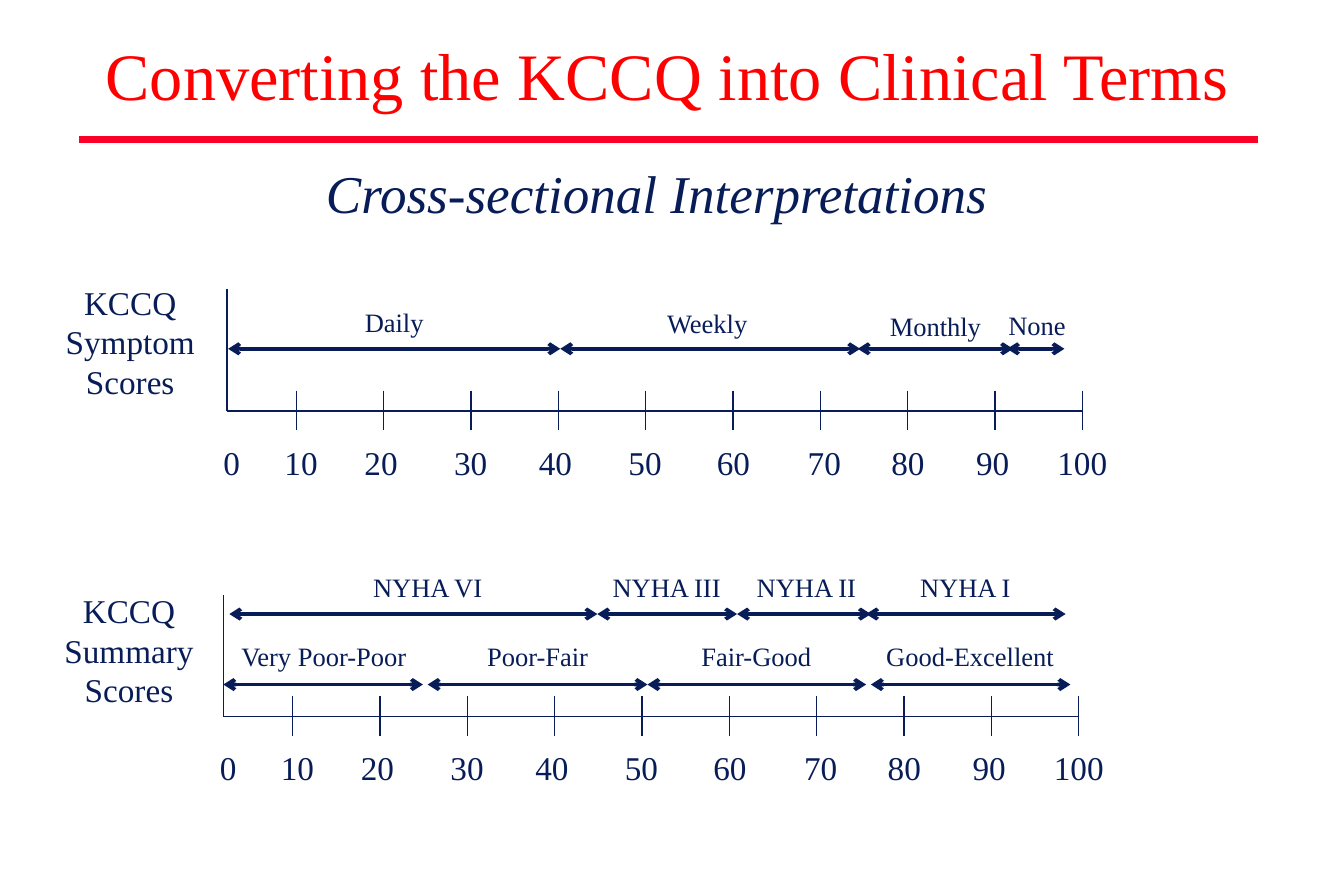
from lxml.etree import SubElement
from pptx import Presentation
from pptx.dml.color import RGBColor
from pptx.enum.shapes import MSO_CONNECTOR
from pptx.enum.text import MSO_ANCHOR, MSO_AUTO_SIZE, PP_ALIGN
from pptx.oxml.ns import qn
from pptx.util import Inches, Pt

NAVY = RGBColor(0x08, 0x1D, 0x58)
RED = RGBColor(0xFF, 0x00, 0x00)
CRIMSON = RGBColor(0xFC, 0x01, 0x28)
FONT = "Times New Roman"

AXIS_LENGTH = 7.16
FIRST_TICK = 0.58
TICK_STEP = (AXIS_LENGTH - FIRST_TICK) / 9
# Centres of the labels 0, 10, ... 100, measured from the start of the axis
NUMBER_CENTRES = [0.04, 0.62, 1.29, 2.04, 2.75, 3.5, 4.24, 5, 5.7, 6.41, 7.16]

# Each scale: name, name left, name top, axis left, axis height, rows of ranges.
# Each row: arrow height, then (label, start, end, label centre, label rise).
SCALES = [
    ("KCCQ Summary Scores", 0.31, 4.89, 1.87, 6, [
        (5.73, [("Very Poor-Poor", 1.87, 3.54, 2.71, 0.42),
                ("Poor-Fair", 3.58, 5.42, 4.5, 0.42),
                ("Fair-Good", 5.42, 7.25, 6.33, 0.42),
                ("Good-Excellent", 7.29, 8.96, 8.12, 0.42)]),
        (5.14, [("NYHA VI", 1.92, 5, 3.58, 0.41),
                ("NYHA III", 5, 6.17, 5.58, 0.41),
                ("NYHA II", 6.17, 7.29, 6.75, 0.41),
                ("NYHA I", 7.25, 8.92, 8.08, 0.41)]),
    ]),
    ("KCCQ Symptom Scores", 0.32, 2.31, 1.9, 3.44, [
        (2.92, [("Daily", 1.91, 4.69, 3.3, 0.41),
                ("Weekly", 4.69, 7.2, 5.92, 0.4),
                ("Monthly", 7.18, 8.48, 7.83, 0.37),
                ("None", 8.43, 8.91, 8.68, 0.38)]),
    ]),
]

presentation = Presentation()
presentation.slide_width = Inches(11.25)
presentation.slide_height = Inches(7.5)
slide = presentation.slides.add_slide(presentation.slide_layouts[5])


def write(text, left, top, width, height, shape=None, size=20, color=NAVY,
          italic=False, align=PP_ALIGN.CENTER, anchor=MSO_ANCHOR.TOP):
    """Put formatted text, in inches, into the given shape or a new text box."""
    box = [Inches(length) for length in (left, top, width, height)]
    if shape is None:
        shape = slide.shapes.add_textbox(*box)
    shape.left, shape.top, shape.width, shape.height = box
    frame = shape.text_frame
    frame.word_wrap = True
    frame.auto_size = MSO_AUTO_SIZE.NONE
    frame.vertical_anchor = anchor
    paragraph = frame.paragraphs[0]
    paragraph.alignment = align
    run = paragraph.add_run()
    run.text = text
    run.font.name = FONT
    run.font.size = Pt(size)
    run.font.italic = italic
    run.font.color.rgb = color


def draw_line(x1, y1, x2, y2, color=NAVY, width=0.75, arrows=False):
    connector = slide.shapes.add_connector(
        MSO_CONNECTOR.STRAIGHT, Inches(x1), Inches(y1), Inches(x2), Inches(y2))
    connector.line.color.rgb = color
    connector.line.width = Pt(width)
    if arrows:
        for end in ("a:headEnd", "a:tailEnd"):
            SubElement(connector.line._ln, qn(end), type="arrow")
    SubElement(connector._element.spPr, qn("a:effectLst"))


draw_line(0.66, 1.17, 10.53, 1.17, color=CRIMSON, width=4)
write("Converting the KCCQ into Clinical Terms", 0.71, 0.04, 9.75, 0.96,
      shape=slide.shapes.title, size=40, color=RED, anchor=MSO_ANCHOR.BOTTOM)
write("Cross-sectional Interpretations", 2.63, 1.29, 5.8, 0.64,
      size=32, italic=True, align=PP_ALIGN.LEFT)

for name, name_left, name_top, axis_left, axis_y, rows in SCALES:
    write(name, name_left, name_top, 1.54, 1.11)
    draw_line(axis_left, axis_y - 1.02, axis_left, axis_y)
    draw_line(axis_left, axis_y, axis_left + AXIS_LENGTH, axis_y)

    for index in range(10):
        tick_x = axis_left + FIRST_TICK + index * TICK_STEP
        draw_line(tick_x, axis_y - 0.17, tick_x, axis_y + 0.16)

    for index, centre in enumerate(NUMBER_CENTRES):
        write(str(index * 10), axis_left + centre - 0.35, axis_y + 0.21, 0.7, 0.44)

    for arrow_y, ranges in rows:
        for label, start, end, centre, rise in ranges:
            draw_line(start, arrow_y, end, arrow_y, width=2.25, arrows=True)
            write(label, centre - 0.84, arrow_y - rise, 1.68, 0.37, size=16)

presentation.save("out.pptx")
